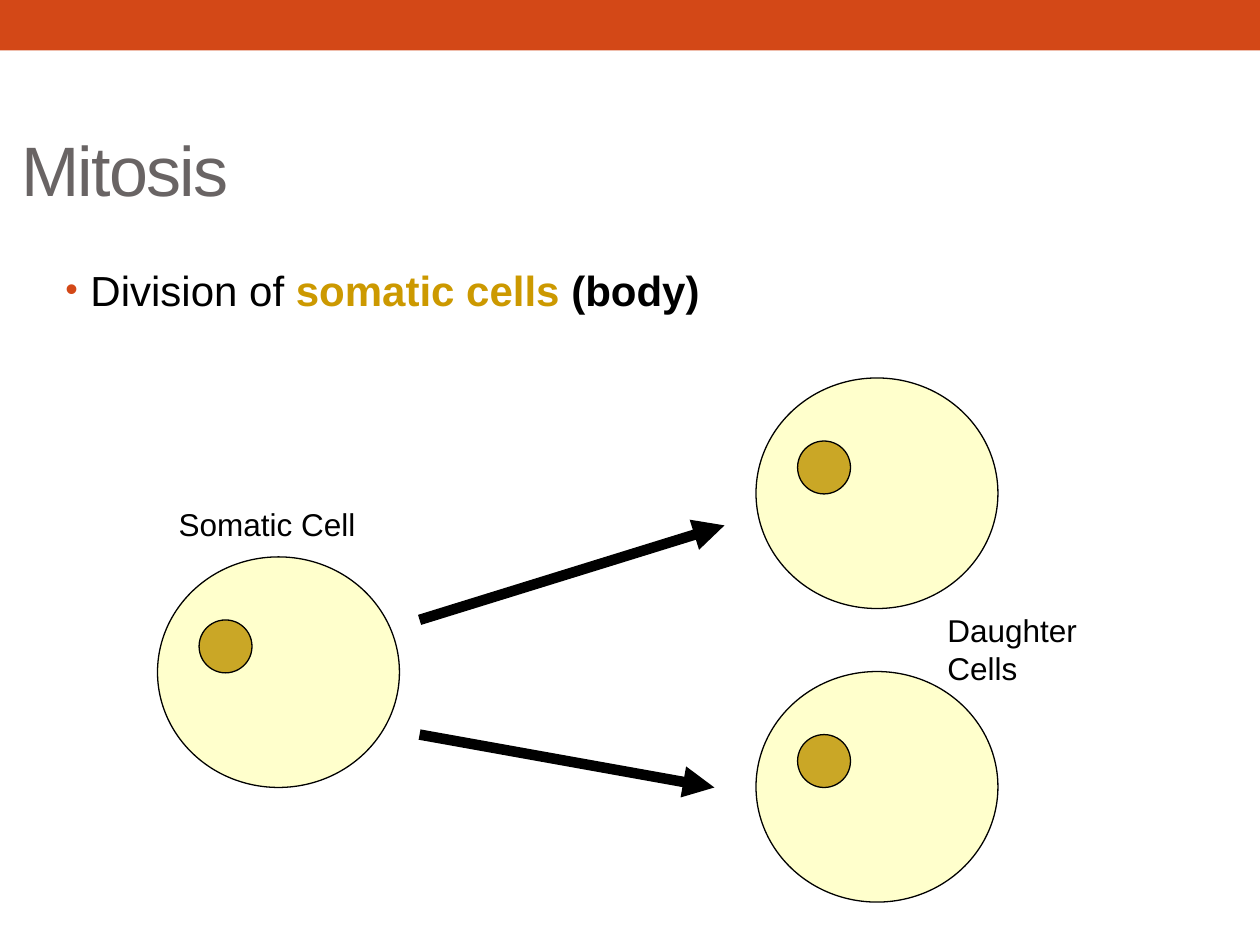
from dataclasses import dataclass

from lxml.etree import SubElement
from pptx import Presentation
from pptx.dml.color import RGBColor
from pptx.enum.shapes import MSO_CONNECTOR, MSO_SHAPE
from pptx.enum.text import MSO_ANCHOR
from pptx.oxml.ns import qn
from pptx.util import Inches, Pt

BLACK = "000000"
ACCENT = "D34817"


@dataclass
class Cell:
    left: float
    top: float


@dataclass
class Arrow:
    start: tuple[float, float]
    end: tuple[float, float]


@dataclass
class Label:
    text: str
    left: float
    top: float
    width: float


CELLS = [Cell(1.25, 4.42), Cell(6, 3), Cell(6, 5.33)]
ARROWS = [Arrow((3.33, 4.92), (5.75, 4.17)), Arrow((3.33, 5.83), (5.67, 6.25))]
LABELS = [Label("Somatic Cell", 1.32, 3.96, 1.6), Label("Daughter Cells", 7.42, 4.8, 1.85)]


def color(value: str) -> RGBColor:
    return RGBColor.from_string(value)


def add_figure(page, kind, left: float, top: float, width: float, height: float,
               fill: str, outlined: bool = True):
    figure = page.shapes.add_shape(kind, Inches(left), Inches(top), Inches(width), Inches(height))
    figure.shadow.inherit = False
    figure.fill.solid()
    figure.fill.fore_color.rgb = color(fill)
    if outlined:
        figure.line.color.rgb = color(BLACK)
        figure.line.width = Pt(0.75)
    else:
        figure.line.fill.background()


def add_cell(page, cell: Cell):
    add_figure(page, MSO_SHAPE.OVAL, cell.left, cell.top, 1.92, 1.83, "FFFFCC")
    add_figure(page, MSO_SHAPE.OVAL, cell.left + 0.33, cell.top + 0.5, 0.42, 0.42, "CAA726")


def add_arrow(page, arrow: Arrow):
    ends = [Inches(value) for value in (*arrow.start, *arrow.end)]
    connector = page.shapes.add_connector(MSO_CONNECTOR.STRAIGHT, *ends)
    connector.line.color.rgb = color(BLACK)
    connector.line.width = Pt(6)
    SubElement(connector.line._get_or_add_ln(), qn("a:tailEnd"), type="triangle")
    SubElement(connector._element.spPr, qn("a:effectLst"))


def add_box(page, left: float, top: float, width: float, height: float,
            wrap: bool = True, anchor=MSO_ANCHOR.TOP):
    box = page.shapes.add_textbox(Inches(left), Inches(top), Inches(width), Inches(height))
    box.text_frame.word_wrap = wrap
    box.text_frame.vertical_anchor = anchor
    return box.text_frame.paragraphs[0]


def add_span(para, text: str, *, size: float, fill: str = BLACK, bold: bool = False,
             spacing: float = 0):
    span = para.add_run()
    span.text = text
    span.font.name = "Arial"
    span.font.size = Pt(size)
    span.font.bold = bold
    span.font.color.rgb = color(fill)
    if spacing:
        span._r.get_or_add_rPr().set("spc", str(round(spacing * 100)))


def add_bullet(para, fill: str, percent: int, indent: float):
    properties = para._p.get_or_add_pPr()
    properties.set("marL", str(Inches(indent)))
    properties.set("indent", str(-Inches(indent)))
    tint = SubElement(properties, qn("a:buClr"))
    SubElement(tint, qn("a:srgbClr"), val=fill)
    SubElement(properties, qn("a:buSzPct"), val=str(percent * 1000))
    SubElement(properties, qn("a:buFont"), typeface="Arial")
    SubElement(properties, qn("a:buChar"), char="•")


def main():
    deck = Presentation()
    deck.slide_width, deck.slide_height = Inches(10), Inches(7.5)
    page = deck.slides.add_slide(deck.slide_layouts[6])

    add_figure(page, MSO_SHAPE.RECTANGLE, 0, 0, 10, 0.4, ACCENT, outlined=False)

    title = add_box(page, 0.07, 0.75, 9, 1.17, anchor=MSO_ANCHOR.MIDDLE)
    add_span(title, "Mitosis", size=40, fill="696464", spacing=-1)

    body = add_box(page, 0.42, 2.05, 9, 4.73)
    body.space_before = Pt(4.8)
    add_bullet(body, ACCENT, 85, 0.2)
    add_span(body, "Division of ", size=24)
    add_span(body, "somatic cells", size=24, fill="CC9900", bold=True)
    add_span(body, " (body)", size=24, bold=True)

    for cell in CELLS:
        add_cell(page, cell)
    for arrow in ARROWS:
        add_arrow(page, arrow)
    for label in LABELS:
        para = add_box(page, label.left, label.top, label.width, 0.4, wrap=False)
        add_span(para, label.text, size=18)

    deck.save("out.pptx")


if __name__ == "__main__":
    main()
